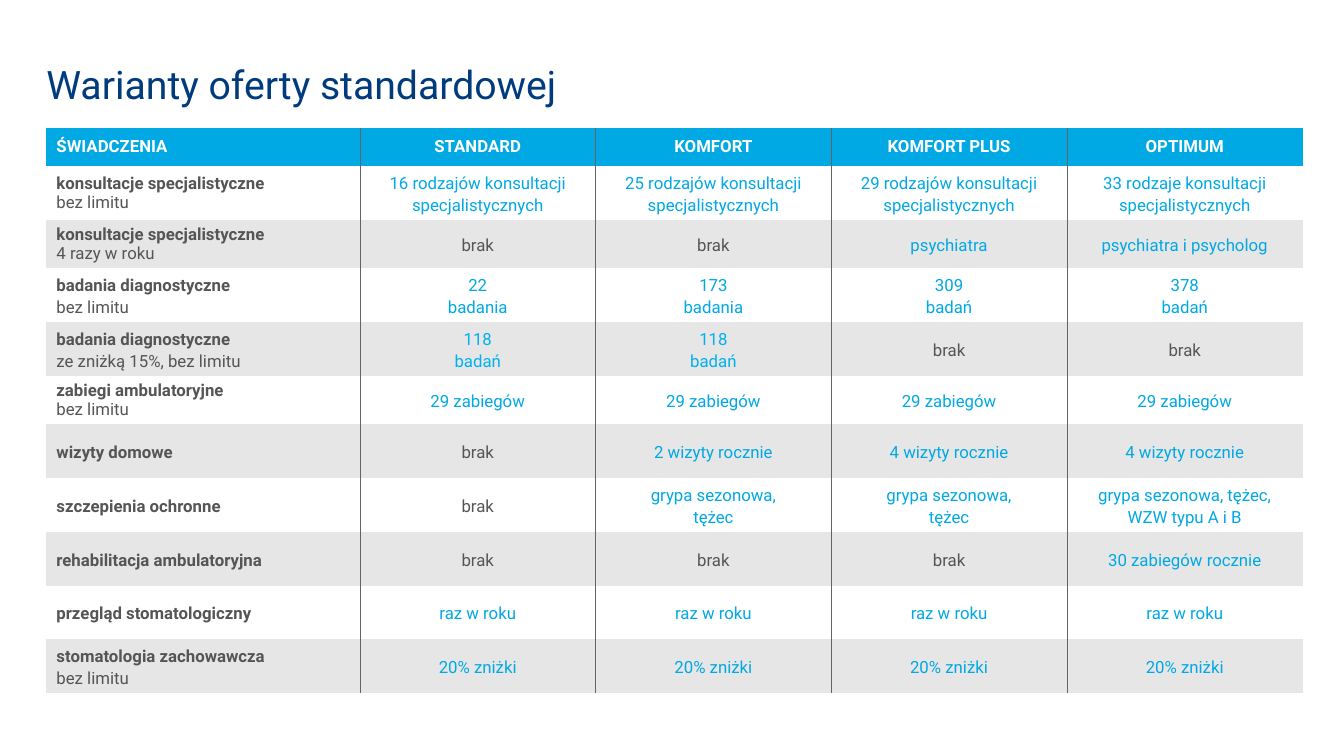
from lxml import etree
from pptx import Presentation
from pptx.dml.color import RGBColor
from pptx.enum import text
from pptx.oxml import ns
from pptx.util import Inches, Pt

FONT = "Roboto"
NAVY, BLUE, BRIGHT_BLUE = "003C7D", "00A8E4", "00B0F0"
DARK_GREY, LINE_GREY, BAND_GREY, WHITE = "555555", "646464", "E6E6E6", "FFFFFF"
NO_STYLE_NO_GRID = "{2D5ABB26-0587-4C30-8999-92F81FD0307C}"

TABLE_WIDTH, TABLE_HEIGHT = 12.46, 5.61
LABEL_WIDTH, HEADER_HEIGHT, SHORT_HEIGHT = 3.11, 0.38, 0.48
SHORT_ROWS = (2, 5)
COMPACT_LABELS = (1, 2, 5)

# "\n" starts a paragraph, "\v" breaks a line within one.
HEADER = ["ŚWIADCZENIA", "STANDARD", "KOMFORT", "KOMFORT PLUS", "OPTIMUM"]
BENEFITS = [
    ["konsultacje specjalistyczne\nbez limitu",
     "16 rodzajów konsultacji specjalistycznych",
     "25 rodzajów konsultacji specjalistycznych",
     "29 rodzajów konsultacji specjalistycznych",
     "33 rodzaje konsultacji specjalistycznych"],
    ["konsultacje specjalistyczne\n4 razy w roku",
     "brak", "brak", "psychiatra", "psychiatra i psycholog"],
    ["badania diagnostyczne\vbez limitu",
     "22\vbadania", "173\vbadania", "309\vbadań", "378\vbadań"],
    ["badania diagnostyczne\vze zniżką 15%, bez limitu",
     "118\nbadań", "118\nbadań", "brak", "brak"],
    ["zabiegi ambulatoryjne\nbez limitu"] + ["29 zabiegów"] * 4,
    ["wizyty domowe",
     "brak", "2 wizyty rocznie", "4 wizyty rocznie", "4 wizyty rocznie"],
    ["szczepienia ochronne",
     "brak", "grypa sezonowa,\ntężec", "grypa sezonowa,\ntężec",
     "grypa sezonowa, tężec,\vWZW typu A i B"],
    ["rehabilitacja ambulatoryjna",
     "brak", "brak", "brak", "30 zabiegów rocznie"],
    ["przegląd stomatologiczny"] + ["raz w roku"] * 4,
    ["stomatologia zachowawcza\nbez limitu"] + ["20% zniżki"] * 4,
]


def rgb(hex_colour):
    return RGBColor.from_string(hex_colour)


def format_paragraph(paragraph, size, colour, align, spacing=1.0):
    paragraph.alignment = align
    paragraph.line_spacing = spacing
    paragraph.font.name = FONT
    paragraph.font.size = Pt(size)
    paragraph.font.color.rgb = rgb(colour)


def add_title(slide, wording):
    title = slide.shapes.title
    title.left, title.top = Inches(0.46), Inches(0.62)
    title.width, title.height = Inches(9.1), Inches(0.43)
    frame = title.text_frame
    frame.margin_left = frame.margin_right = 0
    frame.margin_top = frame.margin_bottom = 0
    frame.vertical_anchor = text.MSO_ANCHOR.MIDDLE
    frame.auto_size = text.MSO_AUTO_SIZE.NONE
    frame.text = wording
    format_paragraph(frame.paragraphs[0], 28, NAVY, text.PP_ALIGN.LEFT)


def add_border(cell, side):
    """Draw a thin line on one side of the cell: lnL or lnR."""
    line = etree.SubElement(cell._tc.get_or_add_tcPr(), ns.qn("a:" + side),
                            w=str(Pt(0.5)))
    fill = etree.SubElement(line, ns.qn("a:solidFill"))
    etree.SubElement(fill, ns.qn("a:srgbClr"), val=LINE_GREY)


def write_cell(cell, wording, colour, align, spacing, bold_lead):
    """Fill the cell with text; bold_lead makes only its first line bold."""
    cell.vertical_anchor = text.MSO_ANCHOR.MIDDLE
    cell.margin_left = cell.margin_right = Inches(0.1)
    cell.margin_top = cell.margin_bottom = Inches(0.04)
    frame = cell.text_frame
    for p_index, part in enumerate(wording.split("\n")):
        paragraph = frame.add_paragraph() if p_index else frame.paragraphs[0]
        for l_index, line in enumerate(part.split("\v")):
            if l_index:
                paragraph.add_line_break()
            run = paragraph.add_run()
            run.text = line
            run.font.bold = bold_lead and p_index == l_index == 0
        format_paragraph(paragraph, 12, colour, align, spacing)


def text_colour(row, column, wording):
    if row == 0:
        return WHITE
    if column == 0 or wording == "brak":
        return DARK_GREY
    return BRIGHT_BLUE if wording.startswith("118") else BLUE


def add_offer_table(slide, rows):
    last = len(rows[0]) - 1
    frame = slide.shapes.add_table(
        len(rows), len(rows[0]), Inches(0.46), Inches(1.27),
        Inches(TABLE_WIDTH), Inches(TABLE_HEIGHT))
    table = frame.table
    table._tbl.tblPr.find(ns.qn("a:tableStyleId")).text = NO_STYLE_NO_GRID

    variant_width = (TABLE_WIDTH - LABEL_WIDTH) / last
    for index, column in enumerate(table.columns):
        column.width = Inches(variant_width if index else LABEL_WIDTH)

    short_total = SHORT_HEIGHT * len(SHORT_ROWS)
    tall_count = len(rows) - 1 - len(SHORT_ROWS)
    tall_height = (TABLE_HEIGHT - HEADER_HEIGHT - short_total) / tall_count
    for r, wordings in enumerate(rows):
        height = SHORT_HEIGHT if r in SHORT_ROWS else tall_height
        table.rows[r].height = Inches(height if r else HEADER_HEIGHT)
        for c, wording in enumerate(wordings):
            cell = table.cell(r, c)
            compact = r == 0 or (c == 0 and r in COMPACT_LABELS)
            write_cell(cell, wording, text_colour(r, c, wording),
                       text.PP_ALIGN.CENTER if c else text.PP_ALIGN.LEFT,
                       1.0 if compact else 1.15, r == 0 or c == 0)
            if c > 0:
                add_border(cell, "lnL")
            if c < last:
                add_border(cell, "lnR")
            if r and r % 2:
                cell.fill.background()
            else:
                cell.fill.solid()
                cell.fill.fore_color.rgb = rgb(BAND_GREY if r else BLUE)


def main():
    deck = Presentation()
    deck.slide_width, deck.slide_height = Inches(13.33), Inches(7.5)
    slide = deck.slides.add_slide(deck.slide_layouts[5])
    add_title(slide, "Warianty oferty standardowej")
    add_offer_table(slide, [HEADER] + BENEFITS)
    deck.save("out.pptx")


if __name__ == "__main__":
    main()
